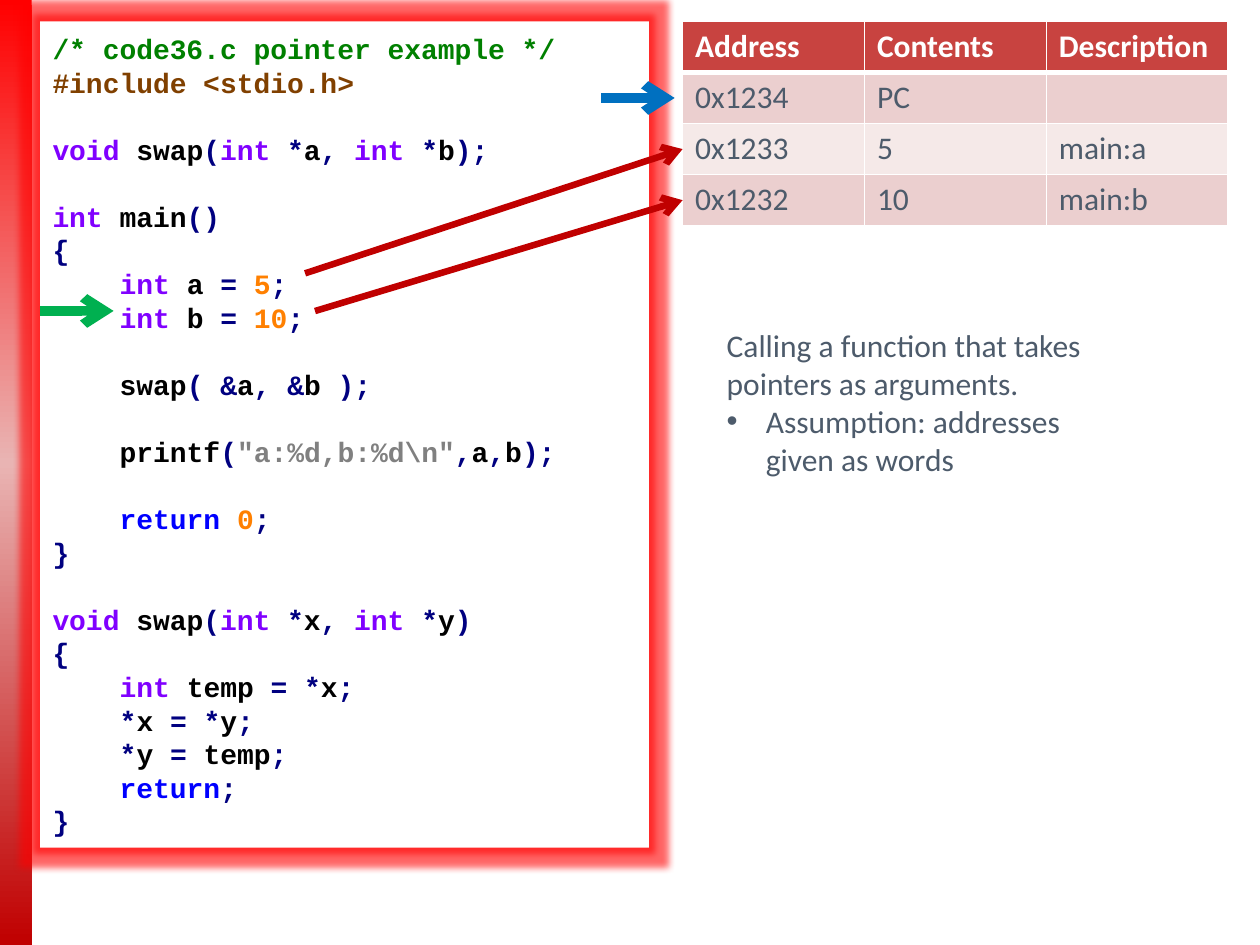
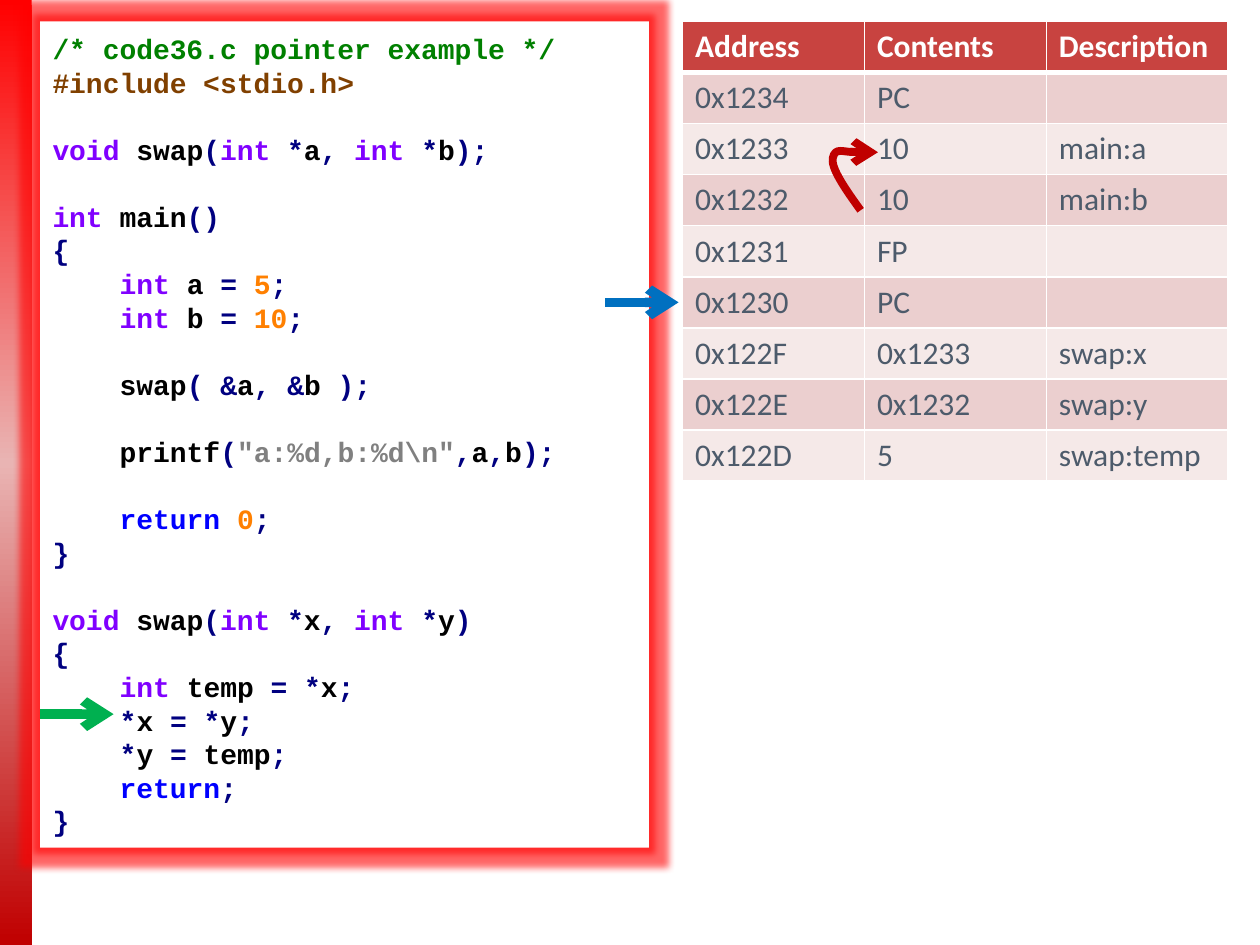
"""Build two slides that trace a C pointer example beside its stack table."""
from itertools import groupby

from lxml.etree import SubElement
from pptx import Presentation
from pptx.dml.color import RGBColor
from pptx.enum.shapes import MSO_CONNECTOR, MSO_SHAPE
from pptx.enum.text import MSO_ANCHOR, PP_ALIGN
from pptx.oxml.ns import qn
from pptx.util import Cm, Pt

CODE = r"""/* code36.c pointer example */
#include <stdio.h>

void swap(int *a, int *b);

int main()
{
    int a = 5;
    int b = 10;

    swap( &a, &b );

    printf("a:%d,b:%d\n",a,b);

    return 0;
}

void swap(int *x, int *y)
{
    int temp = *x;
    *x = *y;
    *y = temp;
    return;
}"""
HEADINGS = ("Address", "Contents", "Description")
NOTE = ("Calling a function that takes pointers as arguments.",
        "Assumption: addresses given as words")
STEPS = [
    {
        "stack": [("0x1234", "PC", ""), ("0x1233", "5", "main:a"),
                  ("0x1232", "10", "main:b")],
        "code_line": 8, "frame_row": 1, "frame_arrow_left": 12.12,
        "stores": [((6.15, 5.51), 2), ((6.35, 6.27), 3)],
        "note": NOTE, "copy_curve": None,
    },
    {
        "stack": [("0x1234", "PC", ""), ("0x1233", "10", "main:a"),
                  ("0x1232", "10", "main:b"), ("0x1231", "FP", ""),
                  ("0x1230", "PC", ""), ("0x122F", "0x1233", "swap:x"),
                  ("0x122E", "0x1232", "swap:y"), ("0x122D", "5", "swap:temp")],
        "code_line": 20, "frame_row": 5, "frame_arrow_left": 12.2,
        "stores": [], "note": None,
        "copy_curve": [(17.35, 4.24), (17.04, 3.81), (16.74, 3.38), (16.79, 3.18),
                       (16.84, 2.97), (17.7, 3.12), (17.7, 3.07)],
    },
]

WIDTH, HEIGHT = 25.4, 19.05
BAND_WIDTH = 0.64
BAND_STOPS = ((0, "FF0000"), (49, "E9B4B3"), (100, "C00000"))
TOP = 0.43
CODE_LEFT, CODE_WIDTH, CODE_HEIGHT = 0.81, 12.27, 16.66
LINE_PITCH, FIRST_LINE = 19.2, 0.85
CHAR_WIDTH = 9.6
TABLE_LEFT, TABLE_WIDTH, ROW_HEIGHT = 13.76, 11, 1.03
ARROW_LENGTH = 1.48
RED, GREEN, BLUE = "C00000", "00B050", "0070C0"
WHITE, INK, HEADER = "FFFFFF", "4D5B6B", "C84340"
ROW_FILLS = ("F5E9E8", "EBCFCF")
CODE_FONT = {"name": "Courier New", "size": Pt(16), "bold": True}
BODY_FONT = {"name": "Calibri", "size": Pt(18), "bold": False}
SYNTAX = {"comment": "008000", "include": "804000", "type": "8000FF",
          "keyword": "0000FF", "number": "FF8000", "string": "808080",
          "symbol": "000080", "name": "000000"}


def rgb(value):
    return RGBColor.from_string(value)


def add_run(paragraph, text, font_format, color):
    run = paragraph.add_run()
    run.text = text
    for key, value in font_format.items():
        setattr(run.font, key, value)
    run.font.color.rgb = rgb(color)


def add_color(parent, color):
    return SubElement(parent, qn("a:srgbClr"), val=color)


def word_kind(word):
    if word in ("int", "void"):
        return "type"
    if word == "return":
        return "keyword"
    if word.isdigit():
        return "number"
    return "name" if word.isalnum() or word.isspace() else "symbol"


def tokens(line):
    for start, kind in (("/*", "comment"), ("#", "include")):
        if line.startswith(start):
            yield line, kind
            return
    for index, piece in enumerate(line.split('"')):
        if index % 2:
            yield f'"{piece}"', "string"
            continue
        for _, letters in groupby(piece, lambda c: (c.isalnum(), c.isspace())):
            word = "".join(letters)
            yield word, word_kind(word)


def add_box(slide, left, top, width, height):
    box = slide.shapes.add_shape(MSO_SHAPE.RECTANGLE, Cm(left), Cm(top), Cm(width), Cm(height))
    box.line.fill.background()
    box.shadow.inherit = False
    return box


def add_band(slide):
    band = add_box(slide, 0, 0, BAND_WIDTH, HEIGHT)
    band.fill.gradient()
    band.fill.gradient_angle = 270
    stops = band._element.spPr.find(qn("a:gradFill")).find(qn("a:gsLst"))
    for stop in list(stops):
        stops.remove(stop)
    for position, color in BAND_STOPS:
        add_color(SubElement(stops, qn("a:gs"), pos=str(position * 1000)), color)


def add_code(slide):
    code = add_box(slide, CODE_LEFT, TOP, CODE_WIDTH, CODE_HEIGHT)
    code.fill.solid()
    code.fill.fore_color.rgb = rgb(WHITE)
    effects = code._element.spPr.find(qn("a:effectLst"))
    glow = SubElement(effects, qn("a:glow"), rad=str(Pt(8)))
    SubElement(add_color(glow, "FF0000"), qn("a:alpha"), val="60000")
    frame = code.text_frame
    frame.word_wrap = True
    frame.vertical_anchor = MSO_ANCHOR.MIDDLE
    paragraph, gap = frame.paragraphs[0], 0
    for index, line in enumerate(CODE.splitlines()):
        if not line:
            gap = LINE_PITCH
            continue
        if index:
            paragraph = frame.add_paragraph()
        paragraph.alignment = PP_ALIGN.LEFT
        paragraph.line_spacing = Pt(LINE_PITCH)
        paragraph.space_before = Pt(gap)
        gap = 0
        text = line.lstrip()
        indent = Pt(CHAR_WIDTH * (len(line) - len(text)))
        paragraph._p.get_or_add_pPr().set("marL", str(indent))
        for word, kind in tokens(text):
            add_run(paragraph, word, CODE_FONT, SYNTAX[kind])


def set_borders(cell, is_header, below_header):
    properties = cell._tc.get_or_add_tcPr()
    for side in "LRTB":
        thick = (is_header and side == "B") or (below_header and side == "T")
        border = SubElement(properties, qn(f"a:ln{side}"), w=str(Pt(3 if thick else 1)))
        add_color(SubElement(border, qn("a:solidFill")), WHITE)


def add_stack(slide, stack):
    rows = [HEADINGS, *stack]
    table = slide.shapes.add_table(
        len(rows), len(HEADINGS), Cm(TABLE_LEFT), Cm(TOP),
        Cm(TABLE_WIDTH), Cm(ROW_HEIGHT * len(rows))).table
    for column in table.columns:
        column.width = Cm(TABLE_WIDTH / len(HEADINGS))
    for r, row in enumerate(rows):
        table.rows[r].height = Cm(ROW_HEIGHT)
        for c, text in enumerate(row):
            cell = table.cell(r, c)
            set_borders(cell, r == 0, r == 1)
            cell.fill.solid()
            cell.fill.fore_color.rgb = rgb(ROW_FILLS[r % 2] if r else HEADER)
            paragraph = cell.text_frame.paragraphs[0]
            if text:
                add_run(paragraph, text, {**BODY_FONT, "bold": r == 0}, INK if r else WHITE)
            else:
                paragraph.font.size = BODY_FONT["size"]


def style_arrow(arrow, color, weight):
    arrow.line.color.rgb = rgb(color)
    arrow.line.width = Pt(weight)
    SubElement(arrow.line._get_or_add_ln(), qn("a:tailEnd"), type="arrow")


def add_arrow(slide, start, end, color, weight):
    arrow = slide.shapes.add_connector(
        MSO_CONNECTOR.STRAIGHT, *(Cm(value) for value in (*start, *end)))
    style_arrow(arrow, color, weight)
    SubElement(arrow._element.spPr, qn("a:effectLst"))


def add_pointer(slide, left, middle, color):
    add_arrow(slide, (left, middle), (left + ARROW_LENGTH, middle), color, 5.5)


def add_curve(slide, points):
    start, *others = [(Cm(x), Cm(y)) for x, y in points]
    builder = slide.shapes.build_freeform(*start)
    builder.add_line_segments(others, close=False)
    curve = builder.convert_to_shape()
    curve.fill.background()
    curve.shadow.inherit = False
    style_arrow(curve, RED, 4.5)
    outline = next(curve._element.iter(qn("a:path")))
    segments = outline.findall(qn("a:lnTo"))
    for index, segment in enumerate(segments):
        if index % 3 == 0:
            bezier = SubElement(outline, qn("a:cubicBezTo"))
        bezier.append(segment[0])
        outline.remove(segment)


def add_note(slide, note):
    frame = slide.shapes.add_textbox(Cm(14.4), Cm(6.45), Cm(8.46), Cm(3.33)).text_frame
    frame.word_wrap = True
    statement, assumption = note
    add_run(frame.paragraphs[0], statement, BODY_FONT, INK)
    bullet = frame.add_paragraph()
    add_run(bullet, assumption, BODY_FONT, INK)
    properties = bullet._p.get_or_add_pPr()
    for key, value in {"marL": Cm(0.79), "indent": -Cm(0.79)}.items():
        properties.set(key, str(value))
    SubElement(properties, qn("a:buFont"), typeface="Arial")
    SubElement(properties, qn("a:buChar"), char="•")


def row_middle(row):
    return TOP + ROW_HEIGHT * (row + 0.5)


def add_step(deck, step):
    slide = deck.slides.add_slide(deck.slide_layouts[6])
    add_band(slide)
    add_code(slide)
    add_stack(slide, step["stack"])
    for start, row in step["stores"]:
        add_arrow(slide, start, (TABLE_LEFT, row_middle(row)), RED, 3.75)
    line_middle = FIRST_LINE + step["code_line"] * Pt(LINE_PITCH).cm
    add_pointer(slide, CODE_LEFT, line_middle, GREEN)
    if step["note"]:
        add_note(slide, step["note"])
    if step["copy_curve"]:
        add_curve(slide, step["copy_curve"])
    add_pointer(slide, step["frame_arrow_left"], row_middle(step["frame_row"]), BLUE)


def main():
    deck = Presentation()
    deck.slide_width, deck.slide_height = Cm(WIDTH), Cm(HEIGHT)
    for step in STEPS:
        add_step(deck, step)
    deck.save("out.pptx")


if __name__ == "__main__":
    main()
